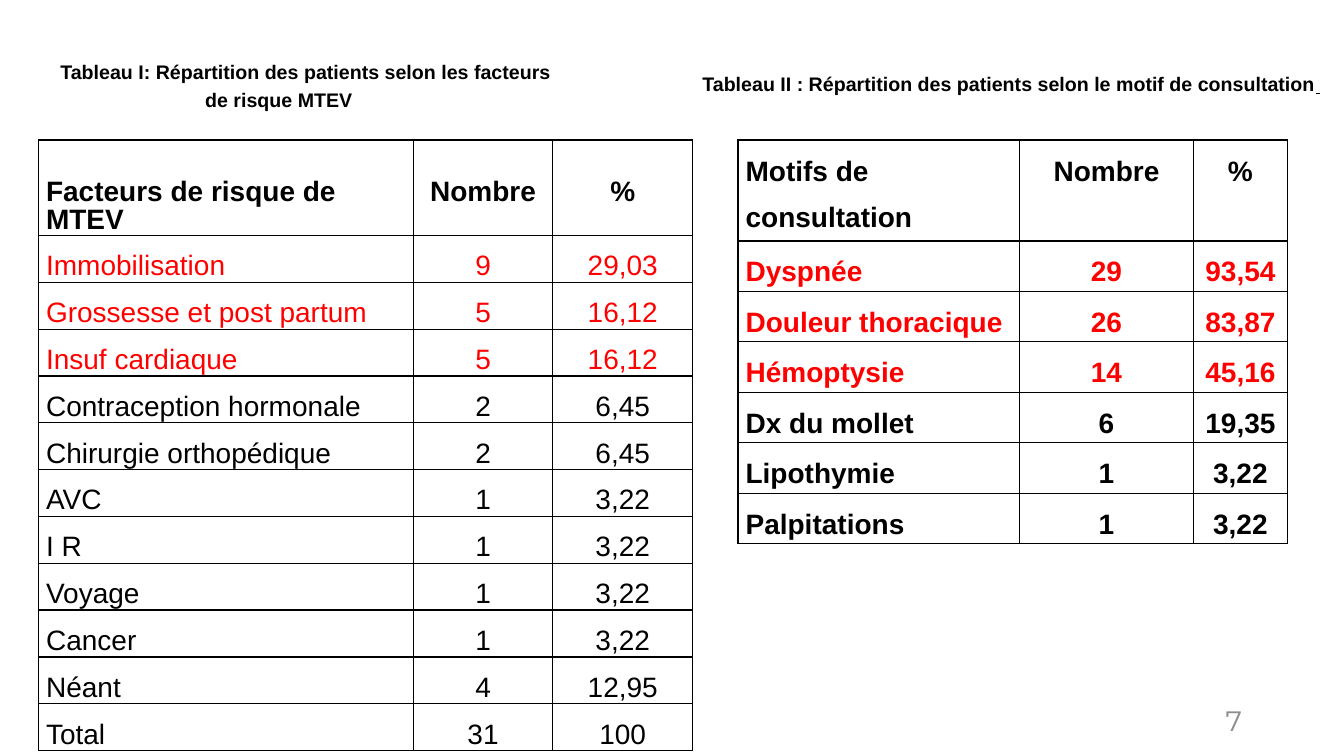
from dataclasses import dataclass

from lxml.etree import SubElement
from pptx import Presentation
from pptx.dml.color import RGBColor
from pptx.enum.text import MSO_ANCHOR, PP_ALIGN
from pptx.oxml.ns import qn
from pptx.util import Cm, Pt


@dataclass(frozen=True)
class Theme:
    ink: str = "000000"
    highlight: str = "FF0000"
    muted: str = "8C8C8C"
    font: str = "Arial"
    number_font: str = "Montserrat"
    blank_font: str = "Times New Roman"
    table_size: int = 20
    caption_size: int = 14
    blank_size: int = 12
    number_size: int = 20
    border_width: int = 1


THEME = Theme()
TABLE_TOP = 3.53
HIGHLIGHTED_ROWS = range(1, 4)

RISK_FACTORS = [
    ("Facteurs de risque de MTEV", "Nombre", "%"),
    ("Immobilisation", "9", "29,03"),
    ("Grossesse et post partum", "5", "16,12"),
    ("Insuf cardiaque", "5", "16,12"),
    ("Contraception hormonale", "2", "6,45"),
    ("Chirurgie orthopédique", "2", "6,45"),
    ("AVC", "1", "3,22"),
    ("I R", "1", "3,22"),
    ("Voyage", "1", "3,22"),
    ("Cancer", "1", "3,22"),
    ("Néant", "4", "12,95"),
    ("Total", "31", "100"),
]
CONSULTATION_REASONS = [
    ("Motifs de consultation", "Nombre", "%"),
    ("Dyspnée", "29", "93,54"),
    ("Douleur thoracique", "26", "83,87"),
    ("Hémoptysie", "14", "45,16"),
    ("Dx du mollet", "6", "19,35"),
    ("Lipothymie", "1", "3,22"),
    ("Palpitations", "1", "3,22"),
]


def add_run(paragraph, text, size, color=THEME.ink, font=THEME.font, bold=False):
    run = paragraph.add_run()
    run.text = text
    run.font.size = Pt(size)
    run.font.name = font
    run.font.bold = bold
    run.font.color.rgb = RGBColor.from_string(color)
    return run


def add_text_frame(slide, left, top, width, height, wrap=True):
    frame = slide.shapes.add_textbox(Cm(left), Cm(top), Cm(width), Cm(height)).text_frame
    frame.word_wrap = wrap
    return frame


def add_borders(cell):
    properties = cell._tc.get_or_add_tcPr()
    for position, side in enumerate(("lnL", "lnR", "lnT", "lnB")):
        border = properties.makeelement(qn(f"a:{side}"), {"w": str(Pt(THEME.border_width))})
        fill = SubElement(border, qn("a:solidFill"))
        SubElement(fill, qn("a:srgbClr"), val=THEME.ink)
        properties.insert(position, border)


def fill_cell(cell, text, centred, color, bold, line_spacing):
    cell.fill.background()
    cell.margin_left = cell.margin_right = Cm(0.19)
    cell.margin_top = cell.margin_bottom = 0
    paragraph = cell.text_frame.paragraphs[0]
    paragraph.alignment = PP_ALIGN.CENTER if centred else PP_ALIGN.LEFT
    paragraph.line_spacing = line_spacing
    paragraph.space_after = Pt(8)
    add_run(paragraph, text, THEME.table_size, color, bold=bold)
    add_borders(cell)


def add_data_table(slide, left, rows, column_widths, header_height, row_height,
                   bold_body, header_spacing=1.5, body_spacing=1.5, header_margin=0):
    heights = [header_height] + [row_height] * (len(rows) - 1)
    table = slide.shapes.add_table(
        len(rows), len(column_widths), Cm(left), Cm(TABLE_TOP),
        Cm(sum(column_widths)), Cm(sum(heights))).table
    table.first_row = table.horz_banding = False
    for column, width in zip(table.columns, column_widths):
        column.width = Cm(width)
    for row_index, (values, height) in enumerate(zip(rows, heights)):
        table.rows[row_index].height = Cm(height)
        is_header = row_index == 0
        color = THEME.highlight if row_index in HIGHLIGHTED_ROWS else THEME.ink
        for column_index, value in enumerate(values):
            cell = table.cell(row_index, column_index)
            fill_cell(cell, value, column_index > 0, color, is_header or bold_body,
                      header_spacing if is_header else body_spacing)
            if is_header:
                cell.margin_top = Cm(header_margin)


def add_risk_caption(slide):
    frame = add_text_frame(slide, 0, 1.27, 17.45, 1.68)
    lines = [("Tableau I: Répartition des patients selon les facteurs", 1.27),
             ("de risque MTEV", 4.92)]
    for index, (text, indent) in enumerate(lines):
        paragraph = frame.add_paragraph() if index else frame.paragraphs[0]
        paragraph.line_spacing = Pt(20)
        paragraph._p.get_or_add_pPr().set("marL", str(Cm(indent)))
        add_run(paragraph, text, THEME.caption_size, bold=True)


def add_consultation_caption(slide):
    frame = add_text_frame(slide, 17.45, 1.68, 16.1, 0.86, wrap=False)
    caption = frame.paragraphs[0]
    add_run(caption, "Tableau II : Répartition des patients selon le motif de consultation",
            THEME.caption_size, bold=True)
    underlined_blank = add_run(caption, " ", THEME.blank_size, font=THEME.blank_font, bold=True)
    underlined_blank.font.underline = True


def add_page_number(slide):
    frame = add_text_frame(slide, 23.93, 17.65, 7.62, 1.02)
    frame.vertical_anchor = MSO_ANCHOR.MIDDLE
    number = frame.paragraphs[0]
    number.alignment = PP_ALIGN.RIGHT
    add_run(number, "7", THEME.number_size, THEME.muted, THEME.number_font)


def main():
    presentation = Presentation()
    presentation.slide_width, presentation.slide_height = Cm(33.87), Cm(19.05)
    slide = presentation.slides.add_slide(presentation.slide_layouts[6])
    add_page_number(slide)
    add_data_table(slide, 0.97, RISK_FACTORS, (9.45, 3.51, 3.53), 2.4, 1.18,
                   bold_body=False, header_spacing=Pt(20), body_spacing=Pt(33),
                   header_margin=0.99)
    add_risk_caption(slide)
    add_data_table(slide, 18.6, CONSULTATION_REASONS, (7.09, 4.39, 2.36), 2.54, 1.27,
                   bold_body=True)
    add_consultation_caption(slide)
    presentation.save("out.pptx")


if __name__ == "__main__":
    main()
